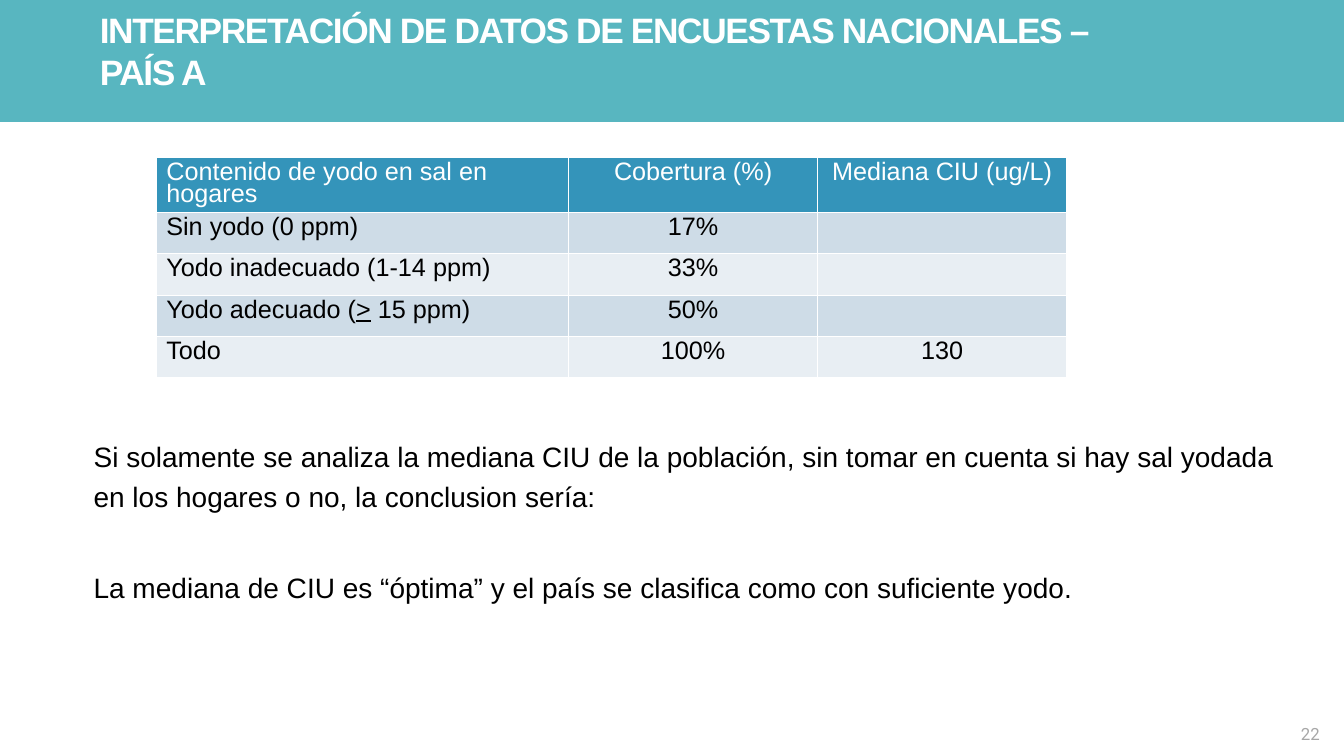
import pptx
import pptx.dml.color
import pptx.enum.shapes
import pptx.enum.text
import pptx.util

Inches = pptx.util.Inches
Pt = pptx.util.Pt
RGBColor = pptx.dml.color.RGBColor
ALIGN = pptx.enum.text.PP_ALIGN
ANCHOR = pptx.enum.text.MSO_ANCHOR

TEAL = RGBColor(0x58, 0xB6, 0xC0)
HEADER_BLUE = RGBColor(0x34, 0x94, 0xBA)
BAND_DARK = RGBColor(0xCE, 0xDC, 0xE7)
BAND_LIGHT = RGBColor(0xE8, 0xEE, 0xF3)
WHITE = RGBColor(0xFF, 0xFF, 0xFF)
BLACK = RGBColor(0x00, 0x00, 0x00)
GRAY = RGBColor(0xA7, 0xA7, 0xA7)


def set_font(paragraph, size, color, name="Arial", bold=False):
    paragraph.font.name = name
    paragraph.font.size = Pt(size)
    paragraph.font.color.rgb = color
    paragraph.font.bold = bold


def set_margins(frame, horizontal, vertical):
    frame.margin_left = frame.margin_right = Inches(horizontal)
    frame.margin_top = frame.margin_bottom = Inches(vertical)


presentation = pptx.Presentation()
presentation.slide_width = Inches(13.33)
presentation.slide_height = Inches(7.5)
slide = presentation.slides.add_slide(presentation.slide_layouts[5])

# Title band, placed behind the title
band = slide.shapes.add_shape(
    pptx.enum.shapes.MSO_SHAPE.RECTANGLE, 0, 0, Inches(13.33), Inches(1.21))
band.shadow.inherit = False
band.fill.solid()
band.fill.fore_color.rgb = TEAL
band.line.fill.background()
title = slide.shapes.title
title._element.addprevious(band._element)

# Title
title.left, title.top = Inches(0.99), Inches(0.22)
title.width, title.height = Inches(10.41), Inches(0.7)
heading = title.text_frame
heading.text = "INTERPRETACIÓN DE DATOS DE ENCUESTAS NACIONALES – PAÍS A"
heading.word_wrap = True
heading.auto_size = pptx.enum.text.MSO_AUTO_SIZE.NONE
heading.vertical_anchor = ANCHOR.BOTTOM
set_margins(heading, 0, 0)
heading.paragraphs[0].alignment = ALIGN.LEFT
set_font(heading.paragraphs[0], 25.2, WHITE, bold=True)
heading.paragraphs[0].runs[0].font._element.set("spc", "-100")

# Survey table: each cell is a list of runs, ">" is underlined
survey_rows = [
    [["Contenido de yodo en sal en hogares"], ["Cobertura (%)"], ["Mediana CIU (ug/L)"]],
    [["Sin yodo (0 ppm)"], ["17%"], []],
    [["Yodo inadecuado (1-14 ppm)"], ["33%"], []],
    [["Yodo adecuado (", ">", " 15 ppm)"], ["50%"], []],
    [["Todo"], ["100%"], ["130"]],
]
survey = slide.shapes.add_table(
    len(survey_rows), 3, Inches(1.55), Inches(1.56), Inches(9.03), Inches(2.05)).table
for column, width in zip(survey.columns, (4.09, 2.47, 2.47)):
    column.width = Inches(width)
for row_index, row in enumerate(survey_rows):
    survey.rows[row_index].height = Inches(0.41)
    if row_index == 0:
        fill_color, text_color = HEADER_BLUE, WHITE
    else:
        fill_color = BAND_DARK if row_index % 2 else BAND_LIGHT
        text_color = BLACK
    for column_index, pieces in enumerate(row):
        cell = survey.cell(row_index, column_index)
        cell.fill.solid()
        cell.fill.fore_color.rgb = fill_color
        paragraph = cell.text_frame.paragraphs[0]
        paragraph.line_spacing = 0.8
        paragraph.alignment = ALIGN.CENTER if column_index else ALIGN.LEFT
        set_font(paragraph, 18, text_color)
        for piece in pieces:
            run = paragraph.add_run()
            run.text = piece
            if piece == ">":
                run.font.underline = True

# Conclusion
conclusion = slide.shapes.add_textbox(
    Inches(0.83), Inches(4.24), Inches(11.97), Inches(2.15)).text_frame
conclusion.word_wrap = True
set_margins(conclusion, 0.1, 0.05)
conclusion.text = (
    "Si solamente se analiza la mediana CIU de la población, sin tomar en cuenta "
    "si hay sal yodada en los hogares o no, la conclusion sería:\n"
    "La mediana de CIU es “óptima” y el país se clasifica como con suficiente yodo.")
for paragraph in conclusion.paragraphs:
    paragraph.line_spacing = 1.2
    set_font(paragraph, 20, BLACK)
conclusion.paragraphs[1].space_before = Pt(36.5)

# Slide number
page_number = slide.shapes.add_textbox(
    Inches(12.85), Inches(7.13), Inches(0.29), Inches(0.3)).text_frame
page_number.text = "22"
page_number.word_wrap = False
page_number.vertical_anchor = ANCHOR.MIDDLE
set_margins(page_number, 0.05, 0.05)
page_number.paragraphs[0].alignment = ALIGN.RIGHT
set_font(page_number.paragraphs[0], 12, GRAY, name="Roboto")

presentation.save("out.pptx")
